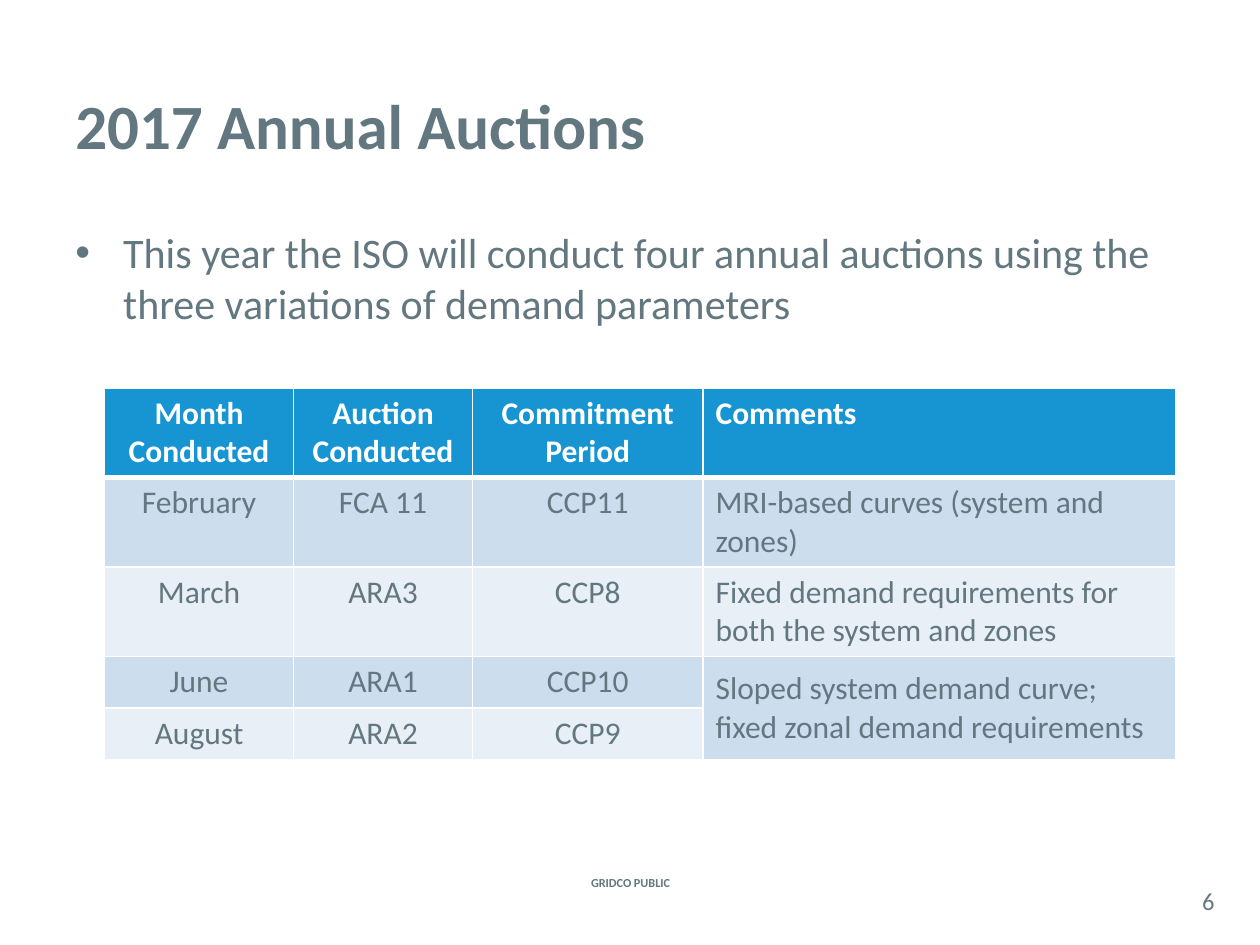
from lxml.etree import SubElement
from pptx import Presentation
from pptx.dml.color import RGBColor
from pptx.enum.text import MSO_ANCHOR, PP_ALIGN
from pptx.oxml.ns import qn
from pptx.util import Inches, Pt

COLORS = {"text": "62777F", "head": "1795D2", "odd": "CCDDEE",
          "even": "E8EFF7", "white": "FFFFFF"}
FONT = "Calibri"
WIDTHS = [1.5, 1.42, 1.83, 3.75]
HEIGHTS = [0.71, 0.71, 0.71, 0.41, 0.41]
ROWS = [
    ["Month Conducted", "Auction Conducted", "Commitment Period", "Comments"],
    ["February", "FCA 11", "CCP11", "MRI-based curves (system and zones)"],
    ["March", "ARA3", "CCP8",
     "Fixed demand requirements for both the system and zones"],
    ["June", "ARA1", "CCP10",
     "Sloped system demand curve; fixed zonal demand requirements"],
    ["August", "ARA2", "CCP9", ""],
]


def color(name):
    return RGBColor.from_string(COLORS[name])


class Deck:
    """Holds the text style and the current slide."""

    def __init__(self):
        self.show = Presentation()
        self.show.slide_width, self.show.slide_height = Inches(10), Inches(7.5)
        self.slide = self.show.slides.add_slide(self.show.slide_layouts[6])

    def style(self, para, size, tone="text", bold=False, align=PP_ALIGN.LEFT):
        para.alignment = align
        look = {"name": FONT, "size": Pt(size), "bold": bold}
        for key, value in look.items():
            setattr(para.font, key, value)
        para.font.color.rgb = color(tone)

    def text(self, box, words, size, anchor=MSO_ANCHOR.MIDDLE, inset=None,
             bullet=False, **look):
        frame = self.slide.shapes.add_textbox(*map(Inches, box)).text_frame
        frame.word_wrap = True
        frame.vertical_anchor = anchor
        if inset is not None:
            for side in ("left", "right", "top", "bottom"):
                setattr(frame, f"margin_{side}", Inches(inset))
        para = frame.paragraphs[0]
        para.text = words
        if bullet:
            self.bullet(para)
        self.style(para, size, **look)

    def bullet(self, para, indent=0.38):
        props = para._p.get_or_add_pPr()
        props.set("marL", str(Inches(indent)))
        props.set("indent", str(-Inches(indent)))
        SubElement(props, qn("a:buFont"), typeface="Arial")
        SubElement(props, qn("a:buChar"), char="•")

    def border(self, cell, sides):
        """Draw white cell borders; sides maps L, R, T, B to points."""
        props = cell._tc.get_or_add_tcPr()
        for side, width in sides.items():
            line = SubElement(props, qn(f"a:ln{side}"), w=str(Pt(width)))
            fill = SubElement(line, qn("a:solidFill"))
            SubElement(fill, qn("a:srgbClr"), val=COLORS["white"])

    def table(self, left, top):
        shape = self.slide.shapes.add_table(
            len(ROWS), len(WIDTHS), Inches(left), Inches(top),
            Inches(sum(WIDTHS)), Inches(sum(HEIGHTS)))
        grid = shape.table
        for col, width in zip(grid.columns, WIDTHS):
            col.width = Inches(width)
        for row, height in zip(grid.rows, HEIGHTS):
            row.height = Inches(height)
        last = len(WIDTHS) - 1
        for r, row in enumerate(ROWS):
            head = r == 0
            tone = "head" if head else "odd" if r % 2 else "even"
            for c, words in enumerate(row):
                cell = grid.cell(r, c)
                self.border(cell, {"L": 1, "R": 1, "T": 3 if r == 1 else 1,
                                   "B": 3 if head else 1})
                cell.fill.solid()
                cell.fill.fore_color.rgb = color(tone)
                para = cell.text_frame.paragraphs[0]
                para.text = words
                self.style(para, 18, "white" if head else "text", head,
                           PP_ALIGN.LEFT if c == last else PP_ALIGN.CENTER)
        shared = grid.cell(3, last)
        shared.merge(grid.cell(4, last))
        shared.vertical_anchor = MSO_ANCHOR.MIDDLE


def main():
    deck = Deck()
    mid = PP_ALIGN.CENTER
    deck.text((4.27, 6.92, 1.47, 0.17), "GRIDCO PUBLIC", 7, bold=True,
              align=mid)
    deck.text((9.42, 7, 0.34, 0.29), "6", 14, inset=0, align=mid)
    deck.text((0.5, 0.3, 9, 1.37), "2017 Annual Auctions", 36, bold=True)
    deck.text((0.5, 1.75, 9, 4.83),
              "This year the ISO will conduct four annual auctions using the "
              "three variations of demand parameters",
              24, anchor=MSO_ANCHOR.TOP, bullet=True)
    deck.table(0.83, 3.08)
    deck.show.save("out.pptx")


if __name__ == "__main__":
    main()
